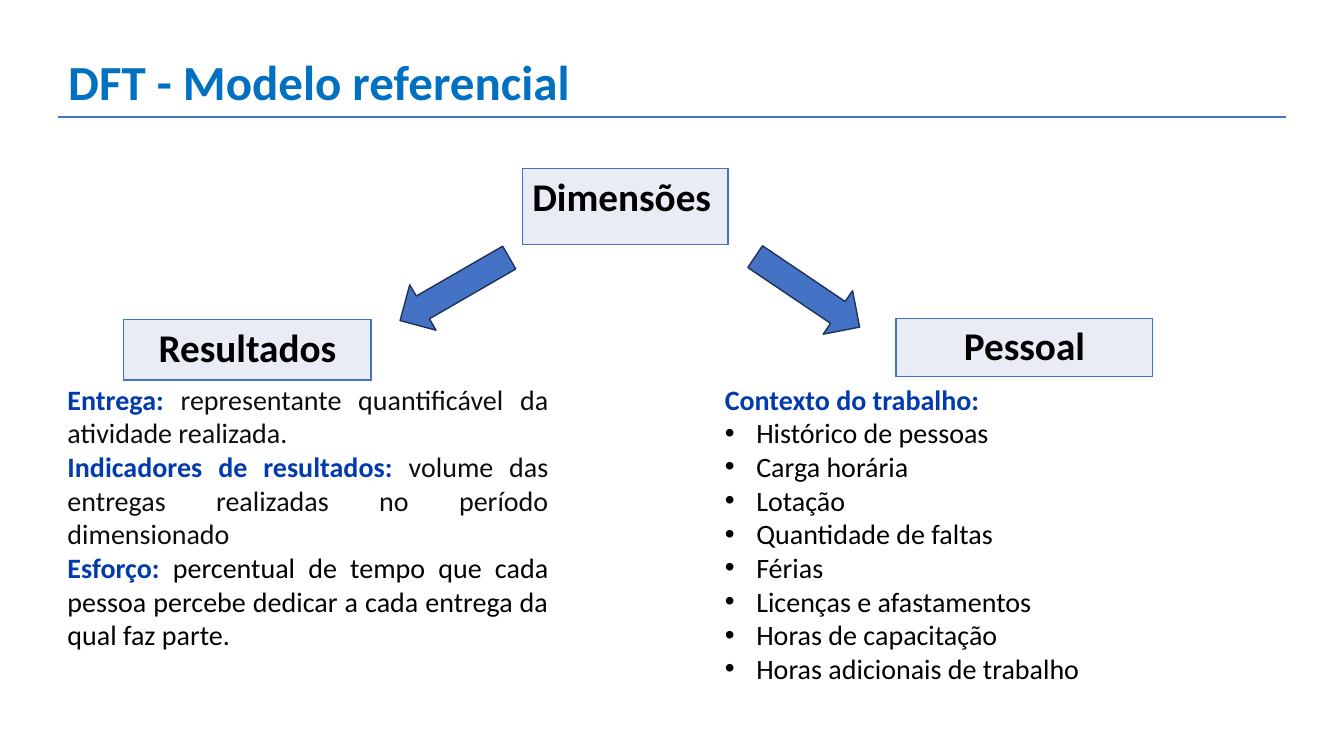
"""Build the DFT reference model slide with its two dimensions."""
from pptx import Presentation
from pptx.dml.color import RGBColor as RGB
from pptx.enum.shapes import MSO_CONNECTOR as LINE, MSO_SHAPE as SHAPE
from pptx.enum.text import MSO_ANCHOR as ANCHOR, MSO_AUTO_SIZE as FIT, PP_ALIGN as ALIGN
from pptx.oxml import parse_xml as xml
from pptx.oxml.ns import nsdecls as ns
from pptx.util import Pt

BLUE = RGB(0x44, 0x72, 0xC4)
NAVY = RGB(0x1E, 0x32, 0x56)
PALE = RGB(0xE9, 0xEB, 0xF5)
SKY = RGB(0x00, 0x70, 0xC0)
DEEP = RGB(0x02, 0x3B, 0xAD)
INK = RGB(0x0D, 0x0D, 0x0D)
BLACK = RGB(0x00, 0x00, 0x00)


def write(par, text, color, size=20, bold=False):
    run = par.add_run()
    run.text = text
    style = {"name": "Calibri", "size": Pt(size), "bold": bold}
    for key, val in style.items():
        setattr(run.font, key, val)
    run.font.color.rgb = color


def place(shape, *box):
    for key, val in zip(("left", "top", "width", "height"), box):
        setattr(shape, key, Pt(val))
    frame = shape.text_frame
    style = {"word_wrap": True, "auto_size": FIT.NONE, "vertical_anchor": ANCHOR.TOP}
    for key, val in style.items():
        setattr(frame, key, val)
    return frame


deck = Presentation()
deck.slide_width, deck.slide_height = Pt(960), Pt(540)
slide = deck.slides.add_slide(deck.slide_layouts[3])
shapes = slide.shapes
title, left, right = slide.placeholders

head = place(title, 41.5, 33, 877.5, 50).paragraphs[0]
head.alignment = ALIGN.LEFT
write(head, "DFT - Modelo referencial", SKY, 35, True)

terms = [
    ("Entrega: ", "representante quantificável da atividade realizada.", INK),
    ("Indicadores de resultados: ",
     "volume das entregas realizadas no período dimensionado", INK),
    ("Esforço: ",
     "percentual de tempo que cada pessoa percebe dedicar a cada entrega da qual faz parte.",
     BLACK),
]
items = ["Histórico de pessoas", "Carga horária", "Lotação", "Quantidade de faltas",
         "Férias", "Licenças e afastamentos", "Horas de capacitação",
         "Horas adicionais de trabalho"]

body = place(left, 41, 269.5, 358, 203)
for num, (term, text, color) in enumerate(terms):
    par = body.add_paragraph() if num else body.paragraphs[0]
    par.alignment = ALIGN.JUSTIFY
    write(par, term, DEEP, bold=True)
    write(par, text, color)

body = place(right, 510.5, 269.5, 430.5, 226)
write(body.paragraphs[0], "Contexto do trabalho:", DEEP, bold=True)
for item in items:
    par = body.add_paragraph()
    par.alignment = ALIGN.JUSTIFY
    write(par, item, BLACK)

for frame in (left.text_frame, right.text_frame):
    for par in frame.paragraphs:
        par.space_before = Pt(0)
        prop = par._p.get_or_add_pPr()
        mark = par.text in items
        dent = Pt(22.5) if mark else 0
        prop.set("marL", str(dent))
        prop.set("indent", str(-dent))
        tag = 'buChar {} char="•"' if mark else "buNone {}"
        prop.append(xml(f"<a:{tag.format(ns('a'))}/>"))

boxes = [
    ("Resultados", ALIGN.CENTER, 88.5, 228.5, 176.5, 43),
    ("Pessoal", ALIGN.CENTER, 640, 227.5, 183.5, 41),
    ("Dimensões", ALIGN.LEFT, 373, 120.5, 147, 54),
]
for name, align, *box in boxes:
    table = shapes.add_table(1, 1, *map(Pt, box)).table
    table.first_row = table.horz_banding = False
    cell = table.cell(0, 0)
    cell.fill.solid()
    cell.fill.fore_color.rgb = PALE
    par = cell.text_frame.paragraphs[0]
    par.alignment = align
    write(par, name, BLACK, 28, True)
    prop = cell._tc.get_or_add_tcPr()
    for num, side in enumerate("LRTB"):
        prop.insert(num, xml(
            f'<a:ln{side} {ns("a")} w="{Pt(1)}"><a:solidFill>'
            f'<a:srgbClr val="{BLUE}"/></a:solidFill></a:ln{side}>'))

rule = shapes.add_connector(LINE.STRAIGHT, Pt(41.5), Pt(83.5), Pt(918.5), Pt(83.5))
rule.line.color.rgb = BLUE
rule.line.width = Pt(1.25)
rule._element.spPr.append(xml(f"<a:effectLst {ns('a')}/>"))

for x, y, turn in ((306, 161.5, 60), (558, 163.5, 304)):
    arrow = shapes.add_shape(SHAPE.DOWN_ARROW, Pt(x), Pt(y), Pt(37.5), Pt(90))
    arrow.rotation = turn
    arrow.shadow.inherit = False
    arrow.fill.solid()
    arrow.fill.fore_color.rgb = BLUE
    arrow.line.color.rgb = NAVY
    arrow.line.width = Pt(1)

deck.save("out.pptx")
